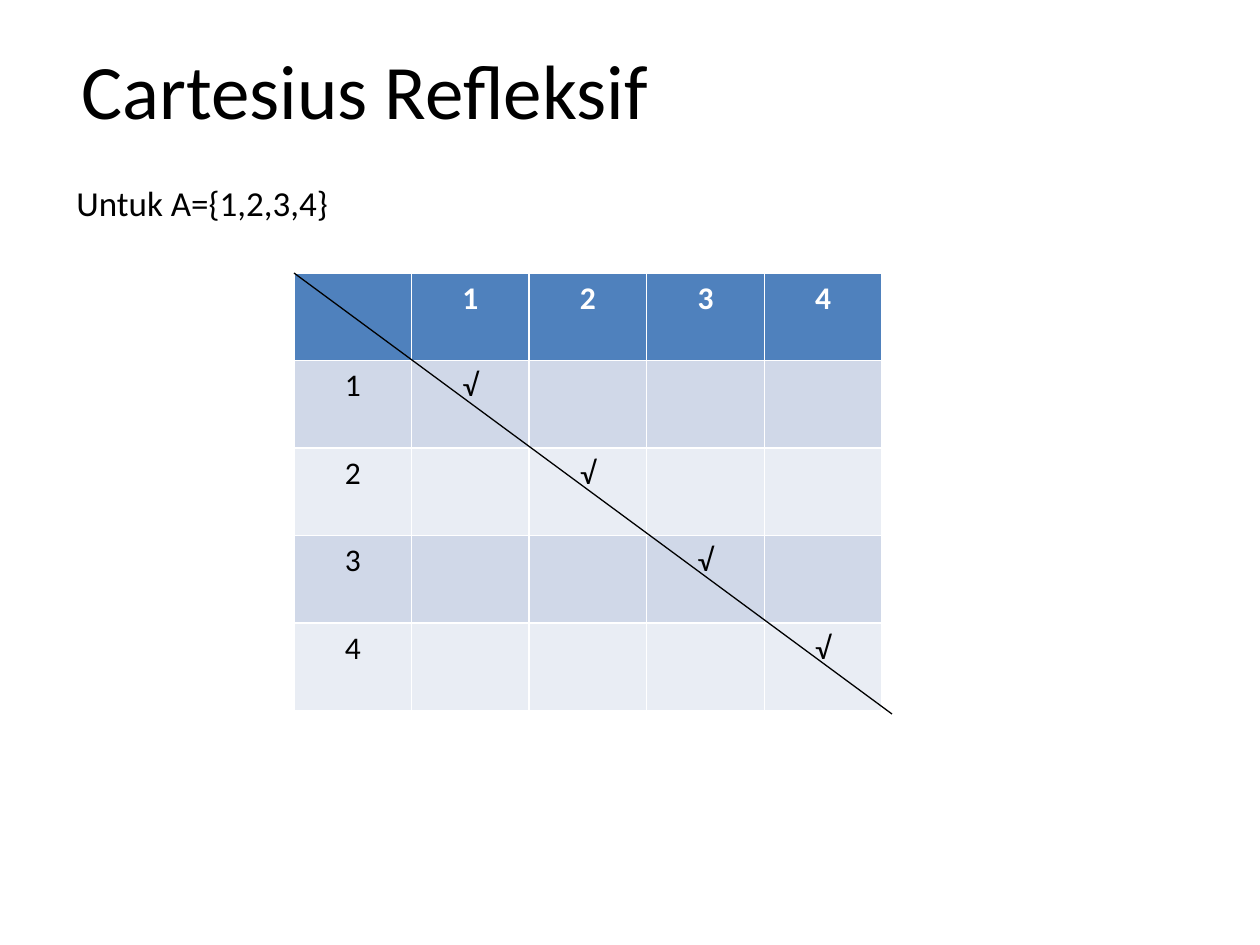
from lxml import etree
from pptx import Presentation
from pptx.dml.color import RGBColor
from pptx.enum.shapes import MSO_CONNECTOR as Connector
from pptx.enum.text import MSO_ANCHOR as Anchor, PP_ALIGN as Align
from pptx.oxml.ns import qn
from pptx.util import Pt

PX = 914400 // 126  # EMU per px
SIZE = 5


def color(value):
    return RGBColor.from_string(value)


def write(frame, text, format_values, font_color="000000"):
    paragraph = frame.paragraphs[0]
    paragraph.text = text
    for name, value in format_values.items():
        setattr(paragraph.font, name, value)
    paragraph.font.color.rgb = color(font_color)
    return paragraph


presentation = Presentation()
presentation.slide_width = 1260 * PX
presentation.slide_height = 945 * PX
slide = presentation.slides.add_slide(presentation.slide_layouts[6])

# Title and set definition
texts = [
    ("Cartesius Refleksif", (69, 10, 1134, 158), 44, Anchor.MIDDLE),
    ("Untuk A={1,2,3,4}", (64, 175, 294, 55), 20, Anchor.TOP),
]
for text, bounds, size, anchor in texts:
    box = slide.shapes.add_textbox(*(length * PX for length in bounds))
    box.text_frame.word_wrap = True
    box.text_frame.vertical_anchor = anchor
    write(box.text_frame, text, {"name": "Calibri", "size": Pt(size)})

# Relation table: labels on the edges, check marks on the diagonal
bounds = (294, 273, 588, 438)
table = slide.shapes.add_table(SIZE, SIZE, *(length * PX for length in bounds)).table
for row in range(SIZE):
    for column in range(SIZE):
        cell = table.cell(row, column)
        header = row == 0
        if row == column:
            text = "" if header else "√"
        else:
            text = str(row + column) if 0 in (row, column) else ""
        cell.fill.solid()
        cell.fill.fore_color.rgb = color(
            "4F81BD" if header else "D0D8E8" if row % 2 else "E9EDF4")
        format_values = {"name": "Calibri", "size": Pt(18), "bold": header}
        paragraph = write(cell.text_frame, text, format_values,
                          "FFFFFF" if header else "000000")
        paragraph.alignment = Align.CENTER

# Diagonal line
diagonal = slide.shapes.add_connector(
    Connector.STRAIGHT, 294 * PX, 273 * PX, 892 * PX, 714 * PX)
diagonal.line.color.rgb = color("000000")
diagonal.line.width = Pt(0.75)
etree.SubElement(diagonal._element.spPr, qn("a:effectLst"))

presentation.save("out.pptx")
